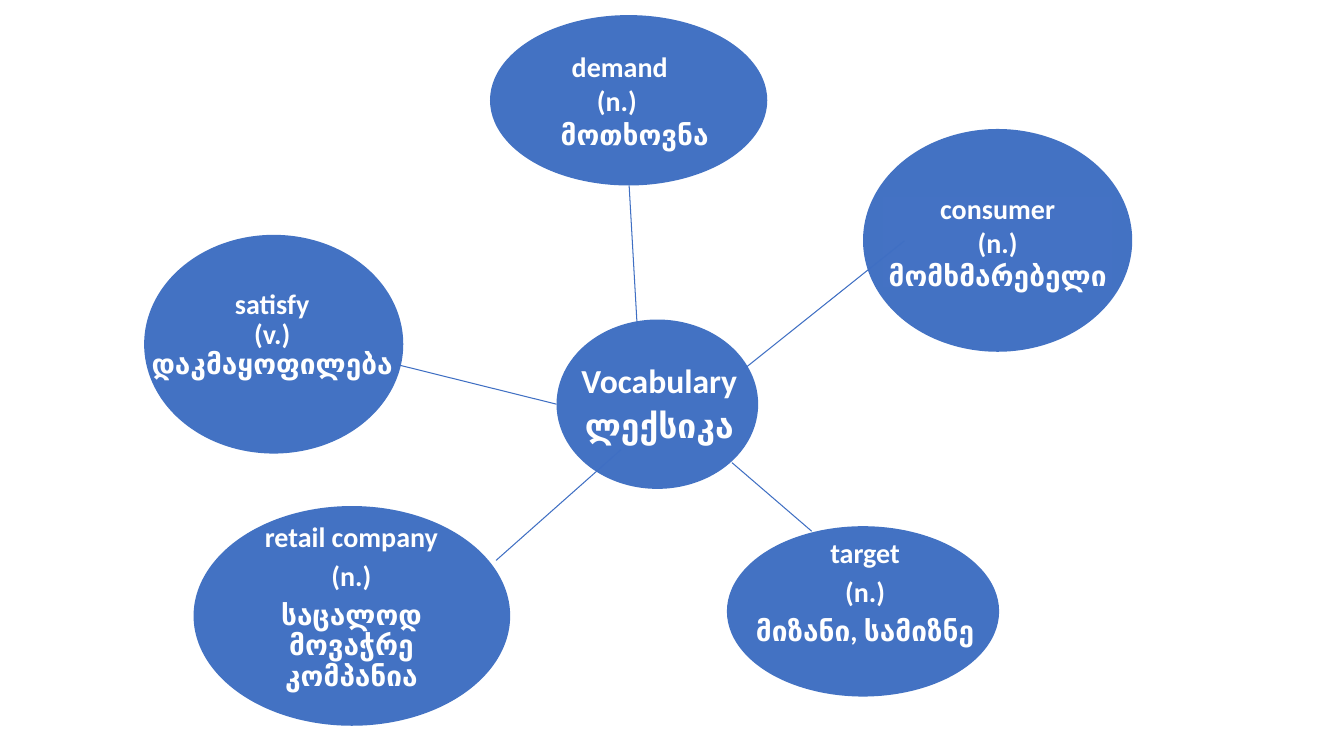
from pptx import Presentation
from pptx.dml.color import RGBColor
from pptx.enum.shapes import MSO_CONNECTOR, MSO_SHAPE
from pptx.enum.text import MSO_ANCHOR, PP_ALIGN
from pptx.oxml.ns import qn
from pptx.util import Inches, Pt
from lxml import etree

OVAL, RECT = MSO_SHAPE.OVAL, MSO_SHAPE.RECTANGLE
STRAIGHT = MSO_CONNECTOR.STRAIGHT
MIDDLE = MSO_ANCHOR.MIDDLE
LEFT, CENTER = PP_ALIGN.LEFT, PP_ALIGN.CENTER
COLORS = {"oval": "4372C3", "panel": "4472C4", "line": "3F6FC3", "text": "FFFFFF"}

# Each word: oval place, label place (None: inside the oval), lines, text format
WORDS = [
    ((5.52, 3.17, 2, 1.68), (5.74, 3.42, 1.6, 1.19),
     ["Vocabulary", "ლექსიკა"], {"size": 24, "gap": 6}),
    ((4.86, 0.15, 2.75, 1.69), None,
     ["demand", "(n.)", "მოთხოვნა"],
     {"spacing": 1, "inset": 0.1, "indents": (0.31, 0.56, 0.2)}),
    ((8.56, 1.28, 2.67, 2.21), (8.76, 1.95, 2.27, 0.9),
     ["consumer", "(n.)", "მომხმარებელი"], {"spacing": 1, "panel": True}),
    ((1.92, 5.02, 3.14, 2.18), (2.34, 5.46, 2.29, 1.14),
     ["retail company", "(n.)", "საცალოდ მოვაჭრე კომპანია"], {"gap": 6.3}),
    ((1.43, 2.33, 2.57, 2.17), (1.32, 2.85, 2.76, 0.95),
     ["satisfy", "(v.)", "დაკმაყოფილება"], {}),
    ((7.21, 5.22, 2.7, 1.69), (6.94, 5.41, 3.28, 0.95),
     ["target", "(n.)", "მიზანი, სამიზნე"], {"gap": 6.3}),
]
LINKS = [
    ((7.26, 4.59), (8.05, 5.27)),
    ((7.38, 3.66), (8.97, 2.39)),
    ((6.24, 1.84), (6.32, 3.24)),
    ((3.95, 3.62), (5.52, 4.01)),
    ((4.92, 5.56), (6.16, 4.46)),
]


def color(name):
    return RGBColor.from_string(COLORS[name])


def add_shape(slide, kind, place, fill):
    shape = slide.shapes.add_shape(kind, *map(Inches, place))
    shape.shadow.inherit = False
    shape.fill.solid()
    shape.fill.fore_color.rgb = color(fill)
    shape.line.fill.background()
    return shape


def write(shape, lines, size=20, spacing=0.9, gap=0, inset=0.01, indents=None):
    """Fill the shape with one paragraph a line; indents make it left-aligned."""
    frame = shape.text_frame
    frame.word_wrap = True
    frame.vertical_anchor = MIDDLE
    frame.margin_left = frame.margin_right = Inches(inset)
    frame.margin_top = frame.margin_bottom = Inches(inset)
    for i, line in enumerate(lines):
        para = frame.add_paragraph() if i else frame.paragraphs[0]
        para.alignment = LEFT if indents else CENTER
        para.line_spacing = spacing
        para.space_before = Pt(gap if i else 0)
        if indents:
            para._p.get_or_add_pPr().set("marL", str(Inches(indents[i])))
        run = para.add_run()
        run.text = line
        font = run.font
        font.name, font.size, font.bold = "Calibri", Pt(size), True
        font.color.rgb = color("text")


def add_word(slide, place, label, lines, panel=False, **form):
    box = add_shape(slide, OVAL, place, "oval")
    if panel:
        box = add_shape(slide, RECT, label, "panel")
    elif label:
        box = slide.shapes.add_textbox(*map(Inches, label))
    write(box, lines, **form)


def add_link(slide, start, end):
    link = slide.shapes.add_connector(STRAIGHT, *map(Inches, start + end))
    link.line.color.rgb = color("line")
    link.line.width = Pt(0.75)
    etree.SubElement(link._element.spPr, qn("a:effectLst"))


def main():
    deck = Presentation()
    deck.slide_width, deck.slide_height = Inches(13.33), Inches(7.5)
    slide = deck.slides.add_slide(deck.slide_layouts[6])
    for place, label, lines, form in WORDS:
        add_word(slide, place, label, lines, **form)
    for start, end in LINKS:
        add_link(slide, start, end)
    deck.save("out.pptx")


if __name__ == "__main__":
    main()
